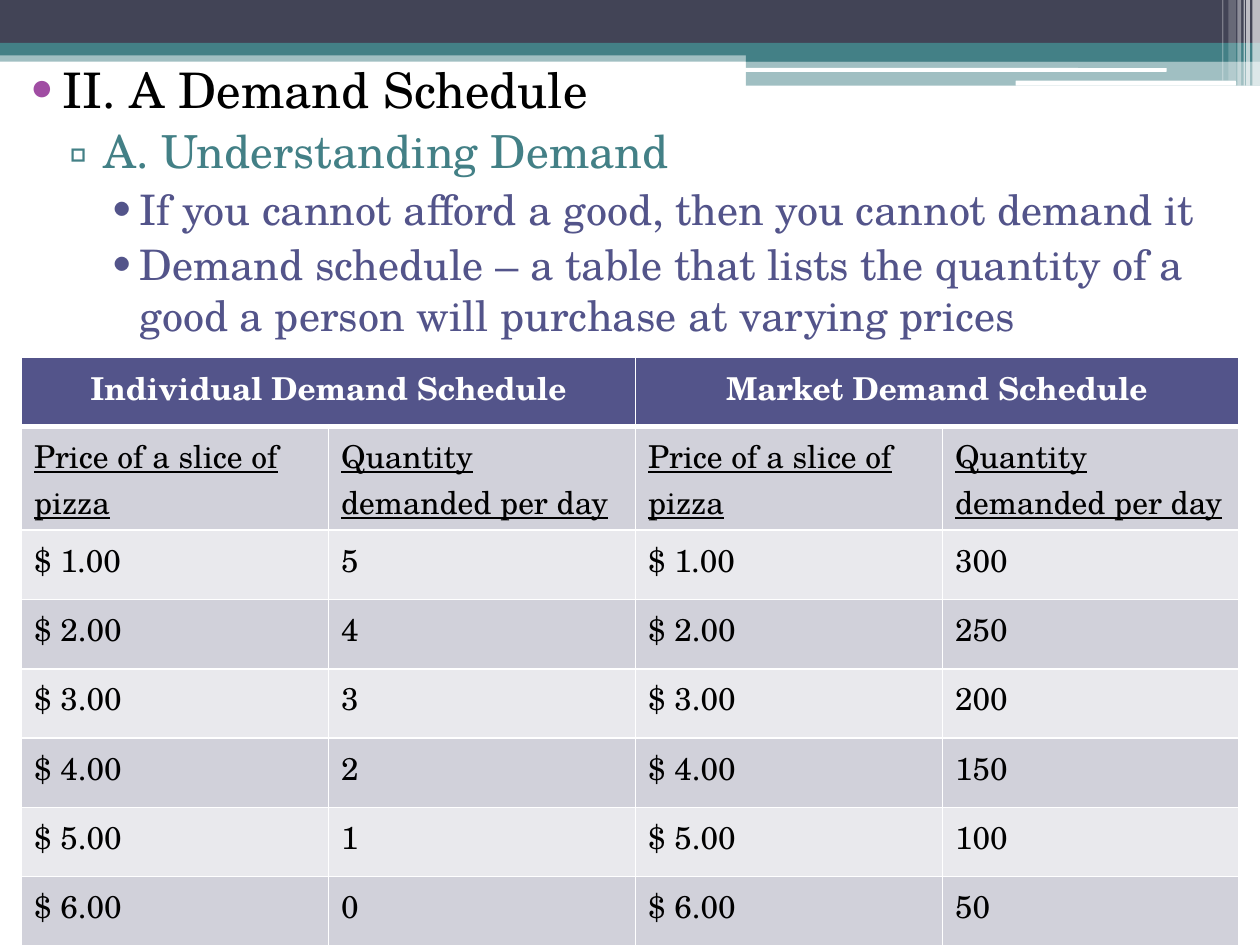
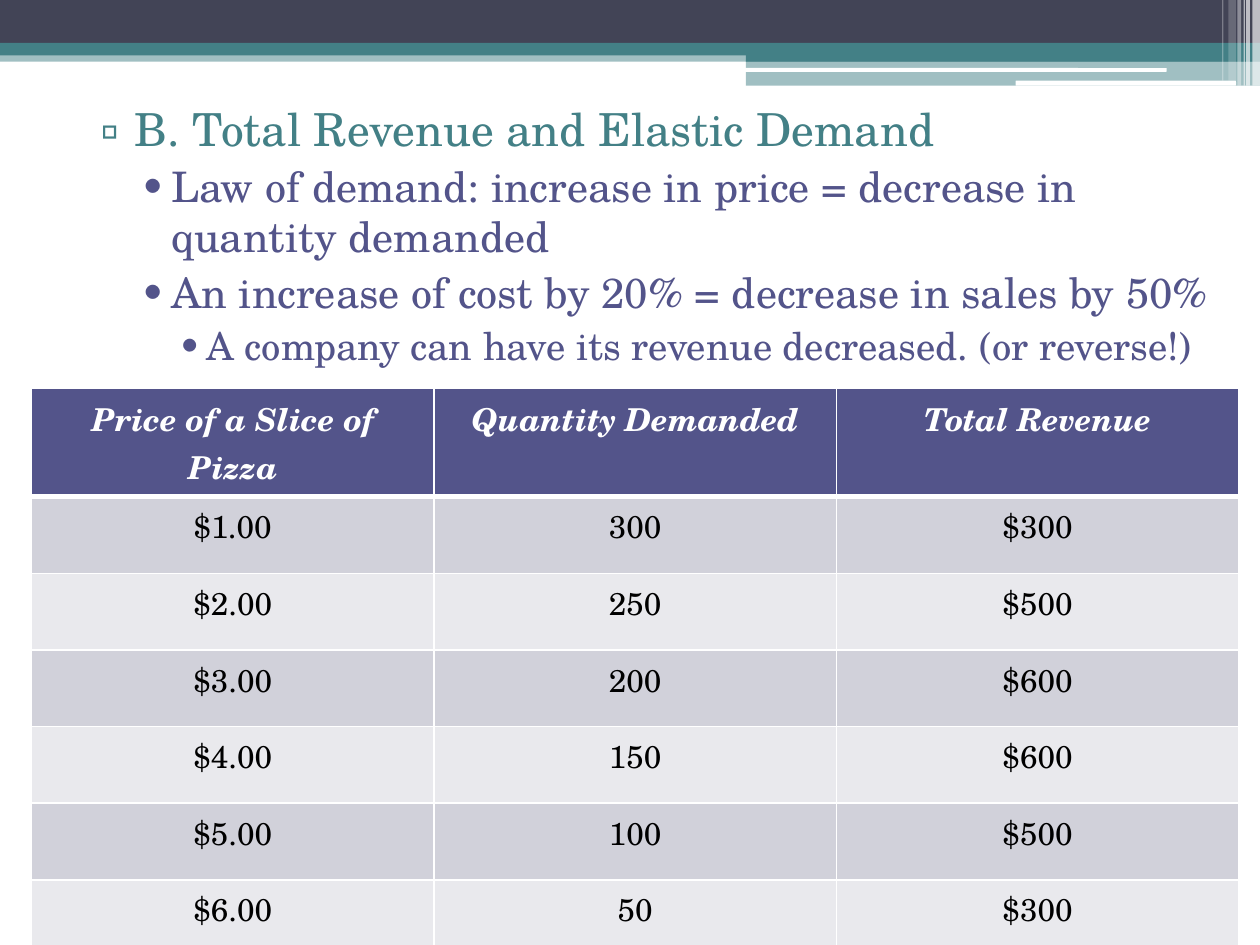
from lxml.etree import SubElement
from pptx import Presentation
from pptx.dml.color import RGBColor as RGB
from pptx.enum.shapes import MSO_SHAPE as SHAPE
from pptx.enum.text import PP_ALIGN as ALIGN
from pptx.oxml.ns import qn
from pptx.util import Inches, Pt

COLS, ROWS = 100, 75  # grid cells across and down the slide
FONT = "TeX Gyre Schola"
COLORS = {
    "ink": "000000", "white": "FFFFFF", "slate": "424456", "teal": "438086",
    "indigo": "53548A", "purple": "A04DA3", "dark_row": "D1D1DA", "light_row": "E9E9ED",
}

# Outline levels: bullet, its font, its colour, text colour, size, left edge and hanging in columns
LEVELS = [
    ("•", FONT, "purple", "ink", 28, 4, 2.8),
    ("▫", "Georgia", "teal", "teal", 26, 7.2, 2.7),
    ("•", FONT, "indigo", "indigo", 24, 10.1, 2.4),
    ("•", FONT, "indigo", "indigo", 22, 12.9, 2.2),
]

# Header bands: column, row, width, height, colour, opacity in percent
BANDS = [
    (0, 4, 100, 0.9, "teal", 50),
    (0, 0, 100, 3.4, "slate", 100),
    (0, 3.4, 100, 1, "teal", 100),
    (59.2, 3.9, 40.8, 1, "teal", 100),
    (59.2, 4.8, 40.8, 2, "teal", 50),
]
ROUNDED_BANDS = [(59.1, 5.4, 33.5, 0.3), (80.6, 6.4, 17.5, 0.4)]
# White stripes at the right edge: column, width, height, opacity in percent
STRIPES = [
    (99.4, 0.6, 6.8, 65), (98.9, 0.3, 6.8, 65), (98.7, 0.1, 6.8, 60),
    (98.2, 0.3, 6.8, 40), (97.5, 0.6, 6.4, 20), (97, 0.1, 6.4, 30),
]

PRICES = range(1, 7)
MARKET_DEMAND = [300, 250, 200, 150, 100, 50]


class Deck:
    def __init__(self):
        self.prs = Presentation()
        self.prs.slide_width, self.prs.slide_height = Inches(10), Inches(7.5)
        self.s = None

    def x(self, cols):
        return round(self.prs.slide_width * cols / COLS)

    def y(self, rows):
        return round(self.prs.slide_height * rows / ROWS)

    def box(self, left, top, width, height):
        return self.x(left), self.y(top), self.x(width), self.y(height)

    def slide(self):
        """Start a blank slide and draw the shared header on it."""
        self.s = self.prs.slides.add_slide(self.prs.slide_layouts[6])
        for *place, color, opacity in BANDS:
            self.band(place, color, opacity)
        for place in ROUNDED_BANDS:
            self.band(place, "white", kind=SHAPE.ROUNDED_RECTANGLE)
        for left, width, height, opacity in STRIPES:
            self.band((left, 0, width, height), "white", opacity)

    def band(self, place, color, opacity=100, kind=SHAPE.RECTANGLE):
        sp = self.s.shapes.add_shape(kind, *self.box(*place))
        sp.shadow.inherit = False
        sp.fill.solid()
        sp.fill.fore_color.rgb = RGB.from_string(COLORS[color])
        sp.line.fill.background()
        if opacity < 100:
            clr = sp.element.spPr.find(".//" + qn("a:srgbClr"))
            SubElement(clr, qn("a:alpha"), val=str(opacity * 1000))

    def style(self, p, size, color, bold=False, italic=False, underline=False):
        for r in p.runs:
            f = r.font
            f.name, f.size = FONT, Pt(size)
            f.bold, f.italic, f.underline = bold, italic, underline
            f.color.rgb = RGB.from_string(COLORS[color])

    def outline(self, place, items):
        """Write (level, text) items as a bulleted outline."""
        tf = self.s.shapes.add_textbox(*self.box(*place)).text_frame
        tf.word_wrap = True
        for i, (level, text) in enumerate(items):
            bullet, bullet_font, bullet_color, color, size, left, hang = LEVELS[level]
            p = tf.add_paragraph() if i else tf.paragraphs[0]
            p.text, p.level = text, level
            p.space_before = Pt(3)
            self.style(p, size, color)
            pPr = p._p.get_or_add_pPr()
            pPr.set("marL", str(self.x(left)))
            pPr.set("indent", str(-self.x(hang)))
            clr = SubElement(pPr, qn("a:buClr"))
            SubElement(clr, qn("a:srgbClr"), val=COLORS[bullet_color])
            SubElement(pPr, qn("a:buFont"), typeface=bullet_font)
            SubElement(pPr, qn("a:buChar"), char=bullet)

    def borders(self, cell, top, bottom):
        tcPr = cell._tc.get_or_add_tcPr()
        for i, (side, width) in enumerate(zip("LRTB", (1, 1, top, bottom))):
            ln = SubElement(tcPr, qn(f"a:ln{side}"), w=str(Pt(width)))
            fill = SubElement(ln, qn("a:solidFill"))
            SubElement(fill, qn("a:srgbClr"), val=COLORS["white"])
            tcPr.insert(i, ln)

    def table(self, left, top, widths, heights, data, header_span=1,
              header_italic=False, underlined_row=None, body_align=ALIGN.LEFT):
        place = self.box(left, top, sum(widths), sum(heights))
        tbl = self.s.shapes.add_table(len(data), len(widths), *place).table
        for col, width in zip(tbl.columns, widths):
            col.width = self.x(width)
        for row, height in zip(tbl.rows, heights):
            row.height = self.y(height)
        for i, values in enumerate(data):
            header = i == 0
            fill = "indigo" if header else "dark_row" if i % 2 else "light_row"
            for j, value in enumerate(values):
                cell = tbl.cell(i, j)
                cell.text = str(value)
                cell.fill.solid()
                cell.fill.fore_color.rgb = RGB.from_string(COLORS[fill])
                p = cell.text_frame.paragraphs[0]
                p.alignment = ALIGN.CENTER if header else body_align
                self.style(p, 18, "white" if header else "ink", bold=header,
                           italic=header and header_italic, underline=i == underlined_row)
                self.borders(cell, top=3 if i == 1 else 1, bottom=3 if header else 1)
        if header_span > 1:
            for j in range(0, len(widths), header_span):
                tbl.cell(0, j).merge(tbl.cell(0, j + header_span - 1))


def demand_schedule(deck):
    deck.slide()
    deck.outline((0, 4.2, 96.7, 65.8), [
        (0, "II. A Demand Schedule"),
        (1, "A. Understanding Demand"),
        (2, "If you cannot afford a good, then you cannot demand it"),
        (2, "Demand schedule – a table that lists the quantity of a good "
            "a person will purchase at varying prices"),
    ])
    data = [["Individual Demand Schedule", "", "Market Demand Schedule", ""],
            ["Price of a slice of pizza", "Quantity demanded per day"] * 2]
    data += [[f"$ {price}.00", 6 - price, f"$ {price}.00", market]
             for price, market in zip(PRICES, MARKET_DEMAND)]
    deck.table(1.7, 28.33, [24.37] * 3 + [23.5], [5.5, 8.25] + [5.5] * 6,
               data, header_span=2, underlined_row=1)


def total_revenue(deck):
    deck.slide()
    deck.outline((2.5, 7.5, 95, 65), [
        (1, "B. Total Revenue and Elastic Demand"),
        (2, "Law of demand: increase in price = decrease in quantity demanded"),
        (2, "An increase of cost by 20% = decrease in sales by 50%"),
        (3, "A company can have its revenue decreased. (or reverse!)"),
    ])
    data = [["Price of a Slice of Pizza", "Quantity Demanded", "Total Revenue"]]
    data += [[f"${price}.00", sold, f"${price * sold}"]
             for price, sold in zip(PRICES, MARKET_DEMAND)]
    deck.table(2.5, 30.83, [31.94] * 3, [8.6] + [6.08] * 6, data,
               header_italic=True, body_align=ALIGN.CENTER)


def main():
    deck = Deck()
    demand_schedule(deck)
    total_revenue(deck)
    deck.prs.save("out.pptx")


if __name__ == "__main__":
    main()
